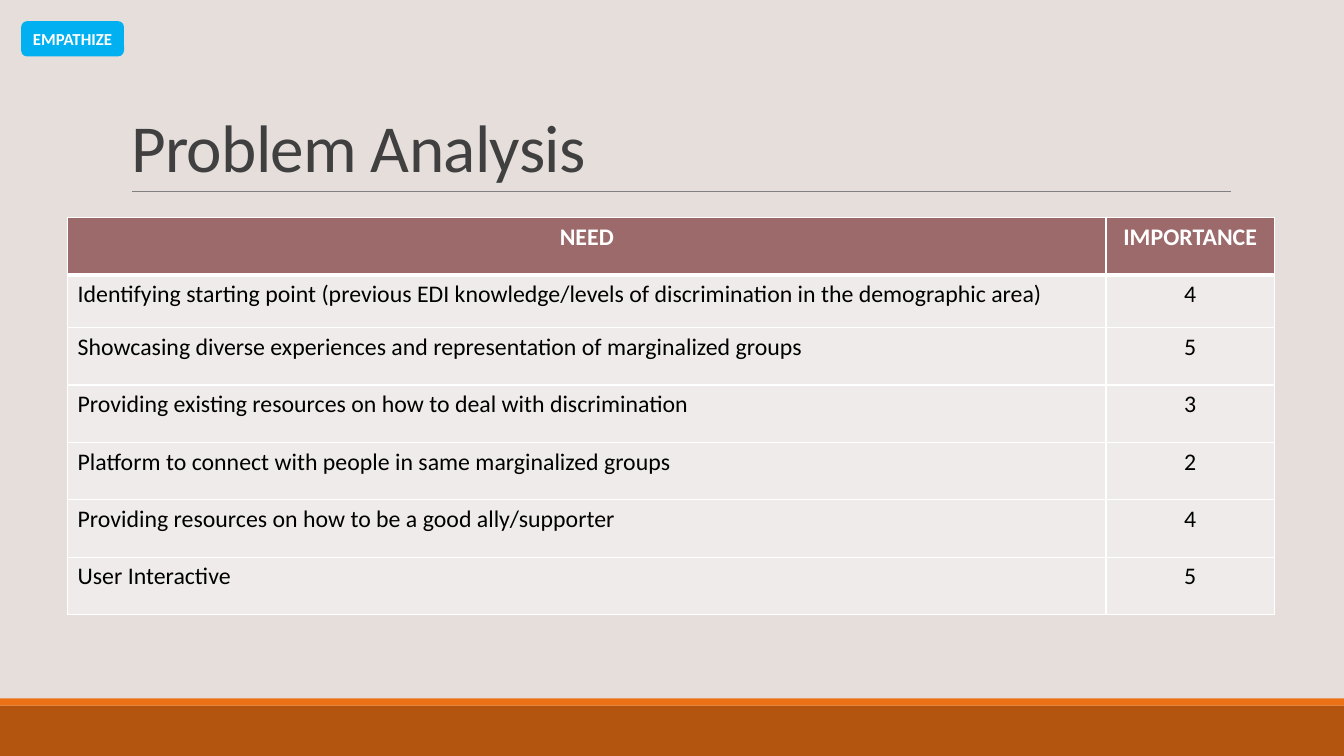
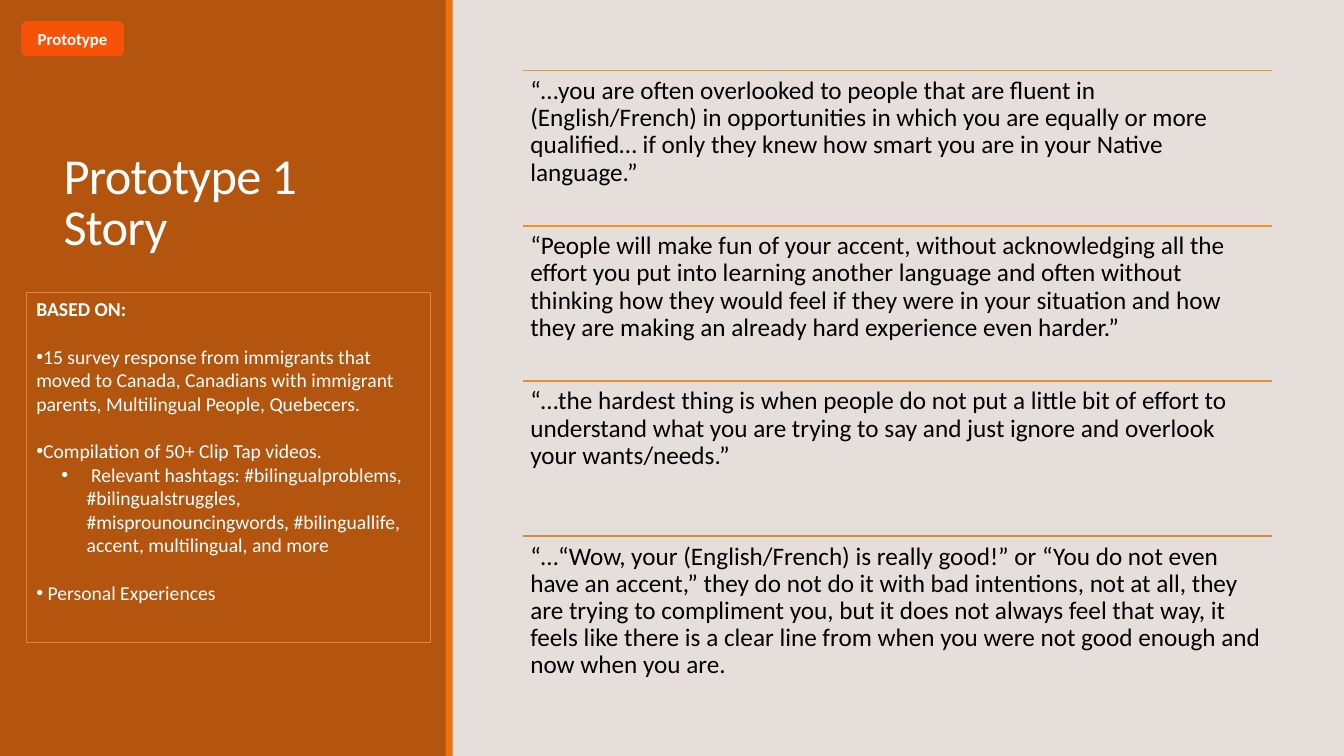
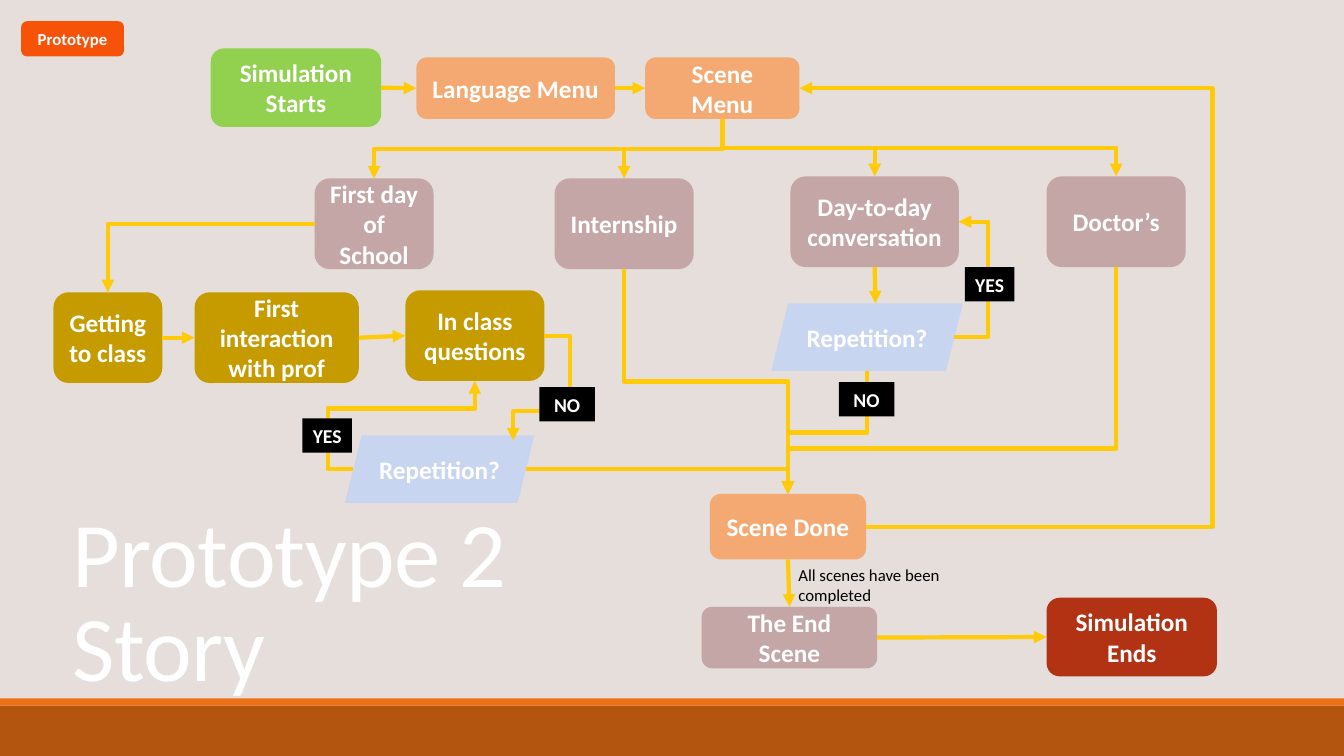
"""Build three design-thinking slides: need analysis, story quotes and a simulation flow."""
import pptx
import pptx.util
import pptx.dml.color
import pptx.enum.shapes
import pptx.enum.text
import pptx.oxml
import pptx.oxml.ns

Inches, Pt = pptx.util.Inches, pptx.util.Pt
SHAPE = pptx.enum.shapes.MSO_SHAPE
CONNECTOR = pptx.enum.shapes.MSO_CONNECTOR
ALIGN = pptx.enum.text.PP_ALIGN
ANCHOR = pptx.enum.text.MSO_ANCHOR
qn = pptx.oxml.ns.qn

FONT = "Calibri"
COLORS = {
    "paper": "E5DEDB", "rust": "B3540F", "orange": "EC7016", "rule": "808080",
    "title": "404040", "white": "FFFFFF", "black": "000000", "head": "9C6A6A",
    "cell": "EFEBEB", "empathize": "00B0F0", "prototype": "F65208",
    "outline": "EF7E39", "menu": "F4A973", "scene": "C4A6A6", "step": "C59B00",
    "test": "C8D5F0", "start": "92D050", "end": "B23214", "arrow": "FFCA08",
    "quote1": "F8931D", "quote2": "EA9128", "quote3": "DC8F33", "quote4": "CE8D3E",
}

NEEDS = [
    ("NEED", "IMPORTANCE"),
    ("Identifying starting point (previous EDI knowledge/levels of discrimination in the demographic area)", "4"),
    ("Showcasing diverse experiences and representation of marginalized groups", "5"),
    ("Providing existing resources on how to deal with discrimination", "3"),
    ("Platform to connect with people in same marginalized groups", "2"),
    ("Providing resources on how to be a good ally/supporter", "4"),
    ("User Interactive", "5"),
]
COL_WIDTHS = (10.3, 1.67)
ROW_HEIGHTS = (0.57, 0.52, 0.57, 0.57, 0.57, 0.57, 0.57)

QUOTES = [
    "“…you are often overlooked to people that are fluent in (English/French) in opportunities in which you are equally or more qualified… if only they knew how smart you are in your Native language.”",
    "“People will make fun of your accent, without acknowledging all the effort you put into learning another language and often without thinking how they would feel if they were in your situation and how they are making an already hard experience even harder.”",
    "“…the hardest thing is when people do not put a little bit of effort to understand what you are trying to say and just ignore and overlook your wants/needs.”",
    "“…“Wow, your (English/French) is really good!” or “You do not even have an accent,” they do not do it with bad intentions, not at all, they are trying to compliment you, but it does not always feel that way, it feels like there is a clear line from when you were not good enough and now when you are.",
]

# fields: text, list level (None for a heading), space before in points
SOURCES = [
    ("BASED ON:", None, 0),
    ("15 survey response from immigrants that moved to Canada, Canadians with immigrant parents, Multilingual People, Quebecers.", 0, 17),
    ("Compilation of 50+ Clip Tap videos.", 0, 17),
    (" Relevant hashtags: #bilingualproblems, #bilingualstruggles, #misprounouncingwords, #bilinguallife, accent, multilingual, and more", 1, 0),
    (" Personal Experiences", 0, 17),
]

PROCESS, ROUND, SLANTED = SHAPE.FLOWCHART_ALTERNATE_PROCESS, SHAPE.ROUNDED_RECTANGLE, SHAPE.PARALLELOGRAM
NODES = {
    "start": ("Simulation Starts", PROCESS, "start", (2.09, 0.48, 1.69, 0.78)),
    "language": ("Language Menu", PROCESS, "menu", (4.13, 0.57, 1.97, 0.61)),
    "menu": ("Scene Menu", PROCESS, "menu", (6.4, 0.57, 1.53, 0.61)),
    "school": ("First day of School", PROCESS, "scene", (3.12, 1.77, 1.18, 0.9)),
    "internship": ("Internship", PROCESS, "scene", (5.5, 1.77, 1.38, 0.9)),
    "daily": ("Day-to-day conversation", PROCESS, "scene", (7.84, 1.75, 1.67, 0.9)),
    "doctor": ("Doctor’s", PROCESS, "scene", (10.38, 1.75, 1.38, 0.9)),
    "getting": ("Getting to class", ROUND, "step", (0.53, 2.9, 1.08, 0.9)),
    "prof": ("First interaction with prof", ROUND, "step", (1.93, 2.9, 1.63, 0.9)),
    "questions": ("In class questions", ROUND, "step", (4.02, 2.88, 1.38, 0.9)),
    "class_test": ("Repetition?", SLANTED, "test", (3.42, 4.32, 1.88, 0.67)),
    "daily_test": ("Repetition?", SLANTED, "test", (7.65, 3.01, 1.9, 0.67)),
    "done": ("Scene Done", PROCESS, "menu", (7.04, 4.9, 1.55, 0.65)),
    "end_scene": ("The End Scene", PROCESS, "scene", (6.96, 6.02, 1.74, 0.61)),
    "end": ("Simulation Ends", PROCESS, "end", (10.38, 5.93, 1.69, 0.78)),
}
STRAIGHT_ARROWS = [
    ("start", 3, "language", 1), ("language", 3, "menu", 1), ("getting", 3, "prof", 1),
    ("prof", 3, "questions", 1), ("daily", 2, "daily_test", 1),
    ("done", 2, "end_scene", 0), ("end_scene", 3, "end", 1),
]
ELBOW_ARROWS = [
    ("menu", 2, "school", 0, 90, 3, ()),
    ("menu", 2, "doctor", 0, 270, 3, ()),
    ("menu", 2, "daily", 0, 270, 3, ()),
    ("menu", 2, "internship", 0, 90, 3, ()),
    ("school", 1, "getting", 0, 180, 2, ()),
    ("class_test", 2, "questions", 2, 180, 4, (-0.21, 0.69)),
    ("questions", 3, (5.09, 4.37), None, 0, 4, (-0.82, 0.72)),
    ("doctor", 2, "done", 0, 90, 3, (0.8,)),
    ("daily_test", 5, "daily", 3, 0, 3, (7.62,)),
    ("daily_test", 4, "done", 0, 90, 3, (0.5,)),
    ("done", 3, "menu", 3, 0, 3, (-5.21,)),
    ("class_test", 5, "done", 0, 0, 2, ()),
    ("internship", 2, "done", 0, 270, 3, ()),
]
ANSWERS = [
    ("YES", (3, 4.15, 0.49, 0.34)), ("YES", (9.57, 2.65, 0.49, 0.34)),
    ("NO", (5.35, 3.84, 0.55, 0.34)), ("NO", (8.32, 3.79, 0.55, 0.34)),
]


def rgb(name):
    return pptx.dml.color.RGBColor.from_string(COLORS[name])


def inches(values):
    return [Inches(v) for v in values]


def write(p, text, size=18, color="white", bold=False, align=ALIGN.LEFT, spacing=None, tracking=None):
    p.text = text
    p.alignment = align
    if spacing:
        p.line_spacing = spacing
    for r in p.runs:
        r.font.name, r.font.size, r.font.bold = FONT, Pt(size), bold
        r.font.color.rgb = rgb(color)
        if tracking:
            r.font._element.set("spc", str(tracking))


def add_box(slide, kind, at, fill, text="", size=18, wrap=True):
    sp = slide.shapes.add_shape(kind, *inches(at))
    sp.shadow.inherit = False
    sp.fill.solid()
    sp.fill.fore_color.rgb = rgb(fill)
    sp.line.fill.background()
    if text:
        tf = sp.text_frame
        tf.word_wrap, tf.vertical_anchor = wrap, ANCHOR.MIDDLE
        write(tf.paragraphs[0], text, size=size, bold=True, align=ALIGN.CENTER)
    return sp


def add_text(slide, at, text, margin=None, **style):
    tf = slide.shapes.add_textbox(*inches(at)).text_frame
    tf.word_wrap = True
    if margin is not None:
        tf.margin_left = tf.margin_right = tf.margin_top = tf.margin_bottom = Inches(margin)
    write(tf.paragraphs[0], text, **style)


def add_line(slide, begin, end, color, width, kind=CONNECTOR.STRAIGHT):
    c = slide.shapes.add_connector(kind, *inches(begin + end))
    c.line.color.rgb, c.line.width = rgb(color), Pt(width)
    c._element.spPr.append(pptx.oxml.parse_xml(f"<a:effectLst {pptx.oxml.ns.nsdecls('a')}/>"))
    return c


def place(sp, at):
    sp.left, sp.top, sp.width, sp.height = inches(at)
    sp.text_frame.word_wrap = True
    sp.text_frame.auto_size = pptx.enum.text.MSO_AUTO_SIZE.NONE


def set_title(slide, text, at, size, color="white", anchor=ANCHOR.MIDDLE):
    sp = slide.shapes.title
    place(sp, at)
    sp.text_frame.vertical_anchor = anchor
    write(sp.text_frame.paragraphs[0], text, size=size, color=color, spacing=0.85, tracking=-50)


def add_bands(slide):
    add_box(slide, SHAPE.RECTANGLE, (0, 7, 13.33, 0.5), "rust")
    add_box(slide, SHAPE.RECTANGLE, (0, 6.93, 13.33, 0.07), "orange")


def add_tag(slide, text, fill):
    add_box(slide, PROCESS, (0.21, 0.21, 1.02, 0.35), fill, text, size=12, wrap=False)


def set_borders(cell, widths):
    tc_pr = cell._tc.get_or_add_tcPr()
    for side, width in zip("LRTB", widths):
        tc_pr.append(pptx.oxml.parse_xml(
            f'<a:ln{side} {pptx.oxml.ns.nsdecls("a")} w="{Pt(width)}"><a:solidFill>'
            f'<a:srgbClr val="{COLORS["white"]}"/></a:solidFill></a:ln{side}>'))


def set_bullet(p, level):
    p_pr = p._p.get_or_add_pPr()
    hanging = level == 1
    p_pr.set("marL", str(Inches(0.5 if hanging else 0)))
    p_pr.set("indent", str(Inches(-0.25 if hanging else 0)))
    bullet = "<a:buNone {}/>" if level is None else '<a:buChar {} char="•"/>'
    p_pr.append(pptx.oxml.parse_xml(bullet.format(pptx.oxml.ns.nsdecls("a"))))


def site(name, idx):
    """Return the point of a numbered connection site."""
    _, kind, _, (x, y, w, h) = NODES[name]
    if kind == SLANTED:
        slant = h / 4
        dx, dy = {1: ((w + slant) / 2, 0), 2: (slant / 2, h / 2),
                  4: (w / 2, h), 5: (w - slant / 2, h / 2)}[idx]
    else:
        dx, dy = ((w / 2, 0), (0, h / 2), (w / 2, h), (w, h / 2))[idx]
    return x + dx, y + dy


def add_arrow(slide, boxes, source, out, target, into, turn=0, bends=None, adjusts=()):
    begin = site(source, out)
    end = target if into is None else site(target, into)
    c = add_line(slide, begin, end, "arrow", 3, CONNECTOR.ELBOW if bends else CONNECTOR.STRAIGHT)
    c.line._get_or_add_ln().append(
        pptx.oxml.parse_xml(f'<a:tailEnd {pptx.oxml.ns.nsdecls("a")} type="triangle"/>'))
    c.begin_connect(boxes[source], 0)
    c._element.find(".//" + qn("a:stCxn")).set("idx", str(out))
    if into is not None:
        c.end_connect(boxes[target], 0)
        c._element.find(".//" + qn("a:endCxn")).set("idx", str(into))

    dx, dy = end[0] - begin[0], end[1] - begin[1]
    across, down = {0: (dx, dy), 90: (dy, -dx), 180: (-dx, -dy), 270: (-dy, dx)}[turn]
    w, h = abs(across), abs(down)
    c.left, c.top, c.width, c.height = inches(
        ((begin[0] + end[0] - w) / 2, (begin[1] + end[1] - h) / 2, w, h))
    xfrm = c._element.spPr.find(qn("a:xfrm"))
    for key, value in (("rot", turn * 60000), ("flipH", int(across < 0)), ("flipV", int(down < 0))):
        xfrm.set(key, str(value))
    if bends:
        geom = c._element.spPr.find(qn("a:prstGeom"))
        geom.set("prst", f"bentConnector{bends}")
        guides = "".join(f'<a:gd name="adj{i}" fmla="val {round(a * 100000)}"/>'
                         for i, a in enumerate(adjusts, 1))
        if bends == 3:
            guides = guides.replace("adj1", "adj1")
        for old in list(geom):
            geom.remove(old)
        geom.append(pptx.oxml.parse_xml(f'<a:avLst {pptx.oxml.ns.nsdecls("a")}>{guides}</a:avLst>'))


def build_analysis(prs):
    s = prs.slides.add_slide(prs.slide_layouts[5])
    add_bands(s)
    add_line(s, (1.31, 1.9), (12.21, 1.9), "rule", 0.5)
    set_title(s, "Problem Analysis", (1.2, 0.31, 11, 1.59), 48, "title", ANCHOR.BOTTOM)
    at = (0.67, 2.16, sum(COL_WIDTHS), sum(ROW_HEIGHTS))
    table = s.shapes.add_table(len(NEEDS), len(COL_WIDTHS), *inches(at)).table
    for col, width in zip(table.columns, COL_WIDTHS):
        col.width = Inches(width)
    for i, (row, height) in enumerate(zip(NEEDS, ROW_HEIGHTS)):
        table.rows[i].height = Inches(height)
        header = i == 0
        for j, text in enumerate(row):
            cell = table.cell(i, j)
            set_borders(cell, (1, 1, 3 if i == 1 else 1, 3 if header else 1))
            cell.fill.solid()
            cell.fill.fore_color.rgb = rgb("head" if header else "cell")
            write(cell.text_frame.paragraphs[0], text, size=17, bold=header,
                  color="white" if header else "black",
                  align=ALIGN.CENTER if header or j else ALIGN.LEFT)
    add_tag(s, "EMPATHIZE", "empathize")


def build_quotes(prs):
    s = prs.slides.add_slide(prs.slide_layouts[1])
    panel = add_box(s, SHAPE.RECTANGLE, (0, 0, 4.43, 7.5), "rust")
    s.shapes._spTree.insert(2, panel._element)
    add_box(s, SHAPE.RECTANGLE, (4.42, 0, 0.07, 7.5), "orange")
    set_title(s, "Prototype 1 Story", (0.53, 1.21, 3.37, 1.64), 36)
    left, width, pitch = 5.19, 7.43, 1.54
    for i, quote in enumerate(QUOTES):
        top = 0.7 + i * pitch
        add_line(s, (left, top), (left + width, top), f"quote{i + 1}", 1.25)
        add_text(s, (left, top, width, pitch), quote, margin=0.07, color="black", spacing=0.9)
    body = s.placeholders[1]
    place(body, (0.26, 2.9, 4.01, 3.47))
    body.line.color.rgb, body.line.width = rgb("outline"), Pt(0.75)
    tf = body.text_frame
    tf.vertical_anchor = ANCHOR.TOP
    for i, (text, level, before) in enumerate(SOURCES):
        p = tf.add_paragraph() if i else tf.paragraphs[0]
        write(p, text, size=14, bold=level is None)
        p.level, p.space_before = level or 0, Pt(before)
        set_bullet(p, level)
    add_tag(s, "Prototype", "prototype")


def build_flow(prs):
    s = prs.slides.add_slide(prs.slide_layouts[5])
    add_bands(s)
    boxes = {name: add_box(s, kind, at, fill, text)
             for name, (text, kind, fill, at) in NODES.items()}
    for arrow in STRAIGHT_ARROWS + ELBOW_ARROWS:
        add_arrow(s, boxes, *arrow)
    for text, at in ANSWERS:
        add_box(s, SHAPE.RECTANGLE, at, "black", text, size=14, wrap=False)
    add_tag(s, "Prototype", "prototype")
    set_title(s, "Prototype 2\vStory", (0.62, 5.41, 5.01, 1.21), 66)
    add_text(s, (7.82, 5.55, 2, 0.5), "All scenes have been completed", size=12, color="black")


def main():
    prs = pptx.Presentation()
    prs.slide_width, prs.slide_height = Inches(13.33), Inches(7.5)
    fill = prs.slide_master.background.fill
    fill.solid()
    fill.fore_color.rgb = rgb("paper")
    build_analysis(prs)
    build_quotes(prs)
    build_flow(prs)
    prs.save("out.pptx")


if __name__ == "__main__":
    main()
